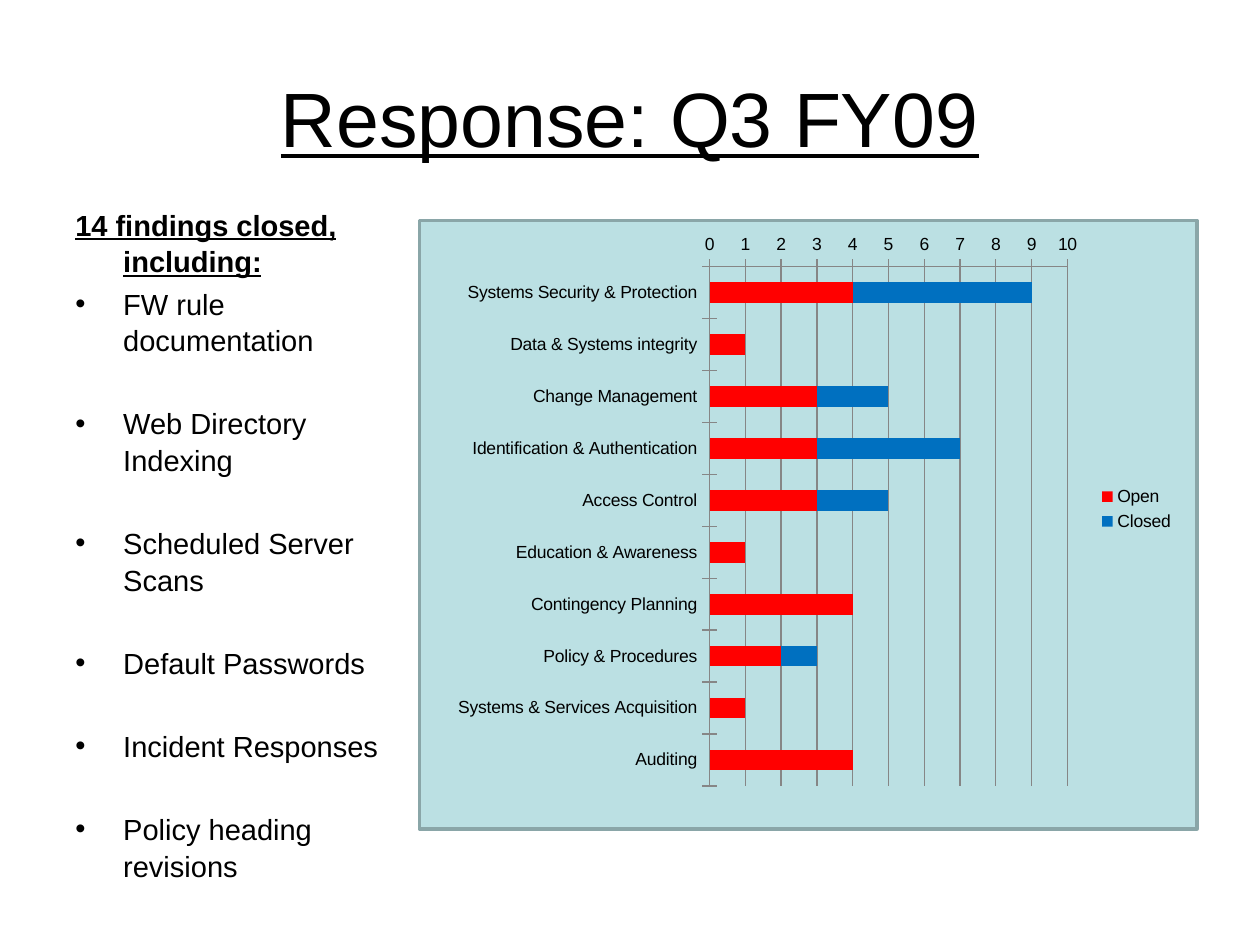
from pptx import Presentation
from pptx import util as u
from pptx.chart.data import CategoryChartData
from pptx.dml.color import RGBColor
from pptx.enum import chart as ch, shapes, text
from pptx.oxml import parse_xml
from pptx.oxml.ns import nsdecls

FONT = "Arial"
COLORS = {"ink": "000000", "panel": "BBE0E3", "edge": "8AA6A8",
          "axis": "868686", "open": "FF0000", "closed": "0070C0"}
ITEMS = ["FW rule documentation", "Web Directory Indexing",
         "Scheduled Server Scans", "Default Passwords",
         "Incident Responses", "Policy heading revisions"]
# Area: (open, closed)
FINDINGS = {
    "Systems Security & Protection": (4, 5),
    "Data & Systems integrity": (1, 0),
    "Change Management": (3, 2),
    "Identification & Authentication": (3, 4),
    "Access Control": (3, 2),
    "Education & Awareness": (1, 0),
    "Contingency Planning": (4, 0),
    "Policy & Procedures": (2, 1),
    "Systems & Services Acquisition": (1, 0),
    "Auditing": (4, 0),
}


def color(name):
    return RGBColor.from_string(COLORS[name])


def style(font, size):
    font.name, font.size = FONT, u.Pt(size)
    font.color.rgb = color("ink")


def add_box(slide, *box):
    frame = slide.shapes.add_textbox(*map(u.Inches, box)).text_frame
    frame.word_wrap = True
    return frame


def add_run(para, words, size, bold=False, line=False):
    run = para.add_run()
    run.text = words
    style(run.font, size)
    run.font.bold, run.font.underline = bold, line


def add_title(slide, words):
    frame = add_box(slide, 0.5, 0.3, 9, 1.25)
    frame.vertical_anchor = text.MSO_ANCHOR.MIDDLE
    para = frame.paragraphs[0]
    para.alignment = text.PP_ALIGN.CENTER
    add_run(para, words, 44, line=True)


def indent(para, bullet=False):
    props = para._p.get_or_add_pPr()
    props.set("marL", str(u.Inches(0.38)))
    props.set("indent", str(-u.Inches(0.38)))
    para.line_spacing = 1.05
    if bullet:
        props.append(parse_xml(f'<a:buFont {nsdecls("a")} typeface="{FONT}"/>'))
        props.append(parse_xml(f'<a:buChar {nsdecls("a")} char="•"/>'))


def add_list(slide, head, items):
    frame = add_box(slide, 0.5, 1.58, 2.83, 5.12)
    para = frame.paragraphs[0]
    indent(para)
    add_run(para, head, 16.6, bold=True, line=True)
    for i, item in enumerate(items):
        para = frame.add_paragraph()
        para.space_before = u.Pt(26.6 if i else 3.3)
        indent(para, bullet=True)
        add_run(para, item, 16.6)


def add_panel(slide, *box):
    panel = slide.shapes.add_shape(shapes.MSO_SHAPE.RECTANGLE,
                                   *map(u.Inches, box))
    panel.shadow.inherit = False
    panel.fill.solid()
    panel.fill.fore_color.rgb = color("panel")
    panel.line.color.rgb = color("edge")
    panel.line.width = u.Pt(2)


def set_plot(chart, x, y, w, h):
    """Fix the inner plot area, in fractions of the chart."""
    area = chart._chartSpace.chart.plotArea
    for old in area.findall("{*}layout"):
        area.remove(old)
    sizes = "".join(f'<c:{k} val="{v}"/>'
                    for k, v in zip("xywh", (x, y, w, h)))
    area.insert(0, parse_xml(
        f'<c:layout {nsdecls("c")}><c:manualLayout>'
        '<c:layoutTarget val="inner"/><c:xMode val="edge"/>'
        f'<c:yMode val="edge"/>{sizes}</c:manualLayout></c:layout>'))


def draw_line(fmt):
    fmt.line.color.rgb = color("axis")
    fmt.line.width = u.Pt(0.75)


def add_bars(slide, *box):
    data = CategoryChartData()
    data.categories = list(FINDINGS)
    for name, vals in zip(("Open", "Closed"), zip(*FINDINGS.values())):
        data.add_series(name, vals)
    chart = slide.shapes.add_chart(ch.XL_CHART_TYPE.BAR_STACKED,
                                   *map(u.Inches, box), data).chart
    style(chart.font, 10)
    chart.has_title = False
    chart.has_legend = True
    chart.legend.position = ch.XL_LEGEND_POSITION.RIGHT
    chart.legend.include_in_layout = False
    # Bars
    plot = chart.plots[0]
    plot.vary_by_categories = False
    plot.gap_width, plot.overlap = 150, 100
    for bars in plot.series:
        bars.format.fill.solid()
        bars.format.fill.fore_color.rgb = color(bars.name.lower())
    # Axes
    cats, vals = chart.category_axis, chart.value_axis
    cats.reverse_order = True
    vals.minimum_scale, vals.maximum_scale, vals.major_unit = 0, 10, 1
    vals.has_major_gridlines = True
    draw_line(vals.major_gridlines.format)
    for axis in (cats, vals):
        axis.major_tick_mark = ch.XL_TICK_MARK.CROSS
        draw_line(axis.format)
    set_plot(chart, 0.36, 0.08, 0.48, 0.9)


def main():
    deck = Presentation()
    deck.slide_width, deck.slide_height = u.Inches(10), u.Inches(7.5)
    slide = deck.slides.add_slide(deck.slide_layouts[6])
    add_panel(slide, 3.33, 1.75, 6.17, 4.83)
    add_title(slide, "Response: Q3 FY09")
    add_list(slide, "14 findings closed, including:", ITEMS)
    add_bars(slide, 3.5, 1.75, 5.92, 4.58)
    deck.save("out.pptx")


if __name__ == "__main__":
    main()
